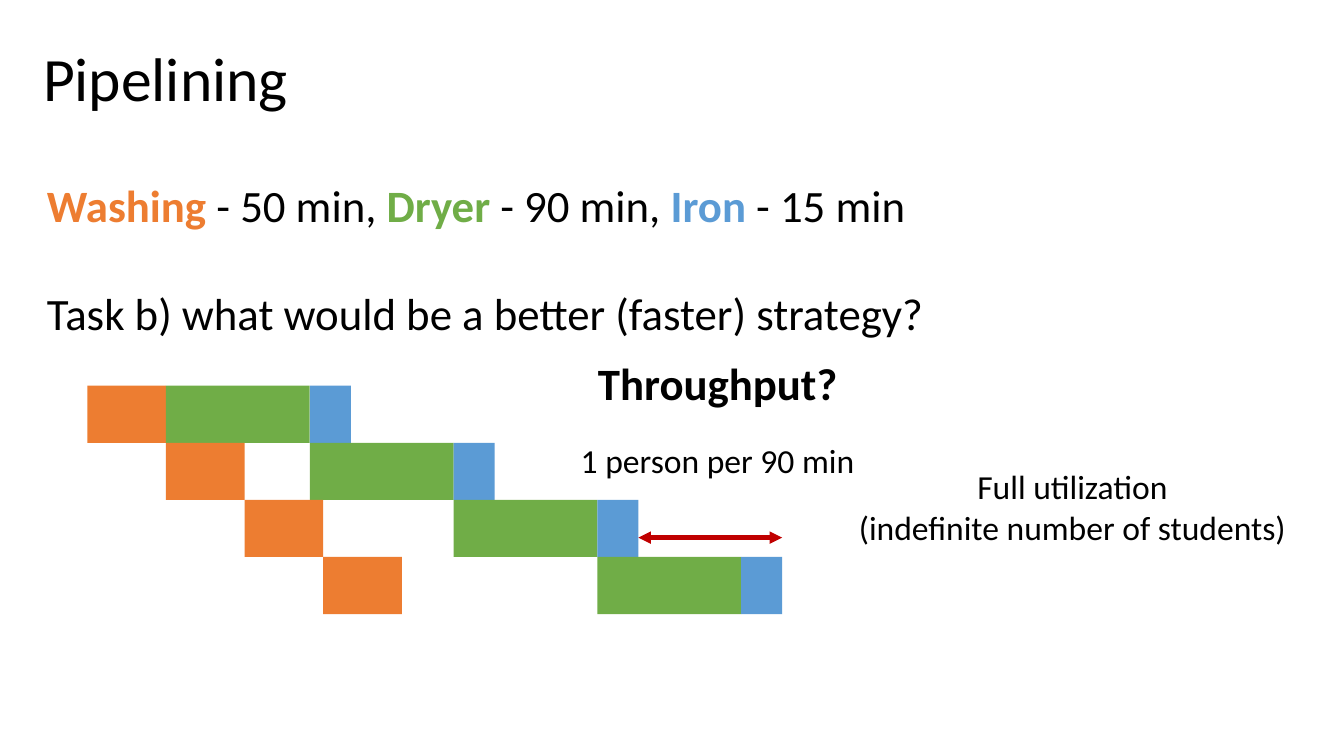
from lxml import etree
from pptx import Presentation
from pptx import util as u
from pptx.dml.color import RGBColor
from pptx.enum import shapes, text
from pptx.oxml import ns

PX = 4572
FONT = "Calibri"
BLACK = RGBColor(0x00, 0x00, 0x00)
ORANGE = RGBColor(0xED, 0x7D, 0x31)
GREEN = RGBColor(0x70, 0xAD, 0x47)
BLUE = RGBColor(0x5B, 0x9B, 0xD5)
RED = RGBColor(0xC0, 0x00, 0x00)
WASH, DRY, IRON = 117, 214, 61
ROW_HEIGHT = 85


def px(*lengths):
    """Turn px lengths into EMU."""
    return [u.Emu(length * PX) for length in lengths]


def format_run(run, size, color=BLACK, bold=False):
    """Set the font of a run."""
    run.font.name = FONT
    run.font.size = u.Pt(size)
    run.font.bold = bold
    run.font.color.rgb = color


def prepare_frame(shape, inset, anchor=text.MSO_ANCHOR.TOP):
    """Set wrapping, insets and anchor, and return the text frame."""
    frame = shape.text_frame
    frame.word_wrap = True
    frame.auto_size = text.MSO_AUTO_SIZE.NONE
    frame.vertical_anchor = anchor
    frame.margin_left, frame.margin_top, frame.margin_right, frame.margin_bottom = px(*[inset] * 4)
    return frame


def place_title(slide, box, wording):
    """Move and format the title placeholder."""
    title = slide.shapes.title
    title.left, title.top, title.width, title.height = px(*box)
    frame = prepare_frame(title, 8, text.MSO_ANCHOR.MIDDLE)
    frame.text = wording
    paragraph = frame.paragraphs[0]
    paragraph.alignment = text.PP_ALIGN.LEFT
    paragraph.line_spacing = 0.9
    format_run(paragraph.runs[0], 33)


def add_task(slide, box):
    """Add the stage durations and the question."""
    frame = prepare_frame(slide.shapes.add_textbox(*px(*box)), 14)
    durations = frame.paragraphs[0]
    stages = [("Washing ", "- 50 min, ", ORANGE), ("Dryer ", "- 90 min, ", GREEN),
              ("Iron ", "- 15 min", BLUE)]
    for name, duration, color in stages:
        for wording, run_color, bold in [(name, color, True), (duration, BLACK, False)]:
            run = durations.add_run()
            run.text = wording
            format_run(run, 24, run_color, bold)
    question = frame.add_paragraph()
    question.text = "Task b) what would be a better (faster) strategy?"
    question.space_before = u.Pt(29)
    format_run(question.runs[0], 24)


def add_note(slide, box, wording, size=18, bold=False):
    """Add a centred note and return its paragraph."""
    frame = prepare_frame(slide.shapes.add_textbox(*px(*box)), 20)
    paragraph = frame.paragraphs[0]
    paragraph.text = wording
    paragraph.alignment = text.PP_ALIGN.CENTER
    for run in paragraph.runs:
        format_run(run, size, bold=bold)
    return paragraph


def add_bar(slide, box, color):
    """Add a plain filled bar."""
    bar = slide.shapes.add_shape(shapes.MSO_SHAPE.RECTANGLE, *px(*box))
    bar.shadow.inherit = False
    bar.fill.solid()
    bar.fill.fore_color.rgb = color
    bar.line.fill.background()


def add_double_arrow(slide, left, right, y):
    """Add a horizontal arrow with a head at each end."""
    arrow = slide.shapes.add_connector(shapes.MSO_CONNECTOR.STRAIGHT, *px(left, y, right, y))
    arrow.line.color.rgb = RED
    arrow.line.width = u.Pt(2.25)
    line = arrow.line._get_or_add_ln()
    for end in ("a:headEnd", "a:tailEnd"):
        etree.SubElement(line, ns.qn(end), type="triangle")
    etree.SubElement(arrow._element.spPr, ns.qn("a:effectLst"))


def add_pipeline(slide, left, top, loads):
    """Stagger the loads, each waiting for the dryer, and mark the last interval."""
    dryer_free = left
    finishes = []
    for load in range(loads):
        y = top + load * ROW_HEIGHT
        wash_start = left + load * WASH
        dry_start = max(wash_start + WASH, dryer_free)
        dryer_free = dry_start + DRY
        bars = [(wash_start, WASH, ORANGE), (dry_start, DRY, GREEN), (dryer_free, IRON, BLUE)]
        for start, width, color in bars:
            add_bar(slide, (start, y, width, ROW_HEIGHT), color)
        finishes.append(dryer_free + IRON)
    add_double_arrow(slide, *finishes[-2:], top + 226)


def main():
    """Build the pipelining slide."""
    presentation = Presentation()
    presentation.slide_width, presentation.slide_height = px(2000, 1125)
    slide = presentation.slides.add_slide(presentation.slide_layouts[5])
    place_title(slide, (56, 0, 1888, 244), "Pipelining")
    add_task(slide, (56, 250, 1888, 272))
    add_pipeline(slide, 130, 574, 4)
    heading = add_note(slide, (784, 518, 568, 172), "Throughput?", 24, True)
    heading.line_spacing = 0.9
    heading.space_before = u.Pt(10)
    add_note(slide, (832, 634, 472, 138), "1 person per 90 min")
    add_note(slide, (1248, 674, 696, 138), "Full utilization\v(indefinite number of students)")
    presentation.save("out.pptx")


if __name__ == "__main__":
    main()
